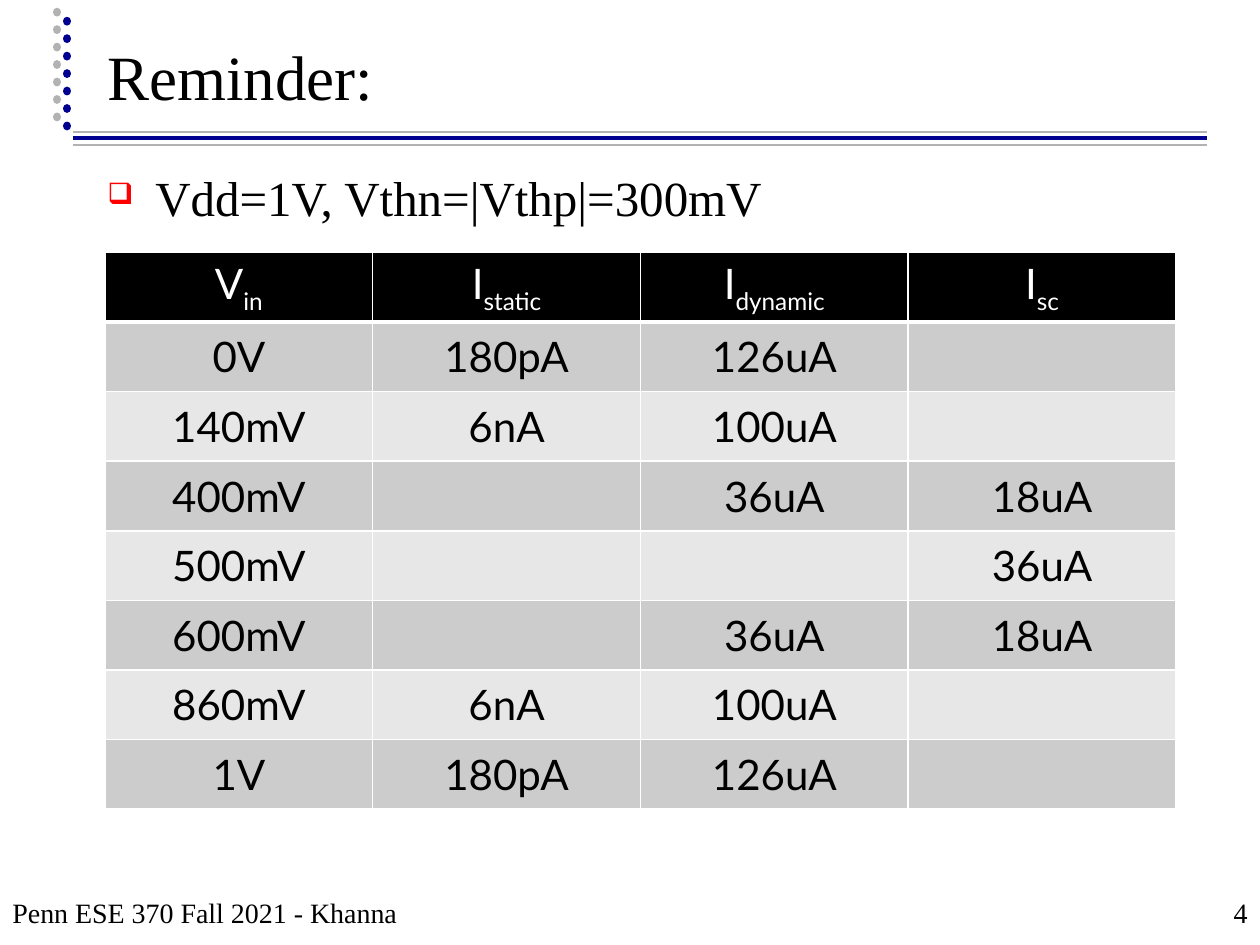
import pptx
import pptx.util
import pptx.dml.color
import pptx.enum.dml
import pptx.enum.shapes
import pptx.enum.text
import pptx.oxml
import pptx.oxml.ns

ALIGN = pptx.enum.text.PP_ALIGN
ANCHOR = pptx.enum.text.MSO_ANCHOR
DOT = pptx.enum.dml.MSO_LINE.ROUND_DOT
NS = pptx.oxml.ns.nsdecls("a")
BLUE, GREY, BLACK, WHITE, RED = "000090", "B2B2B2", "000000", "FFFFFF", "FF0000"
BANDS = ("E7E7E7", "CCCCCC")

HEADERS = [("V", "in"), ("I", "static"), ("I", "dynamic"), ("I", "sc")]
ROWS = [
    ("0V", "180pA", "126uA", ""),
    ("140mV", "6nA", "100uA", ""),
    ("400mV", "", "36uA", "18uA"),
    ("500mV", "", "", "36uA"),
    ("600mV", "", "36uA", "18uA"),
    ("860mV", "6nA", "100uA", ""),
    ("1V", "180pA", "126uA", ""),
]


def px(n):
    return pptx.util.Emu(round(n * 914400 / 126))


def rgb(value):
    return pptx.dml.color.RGBColor.from_string(value)


def xml(text):
    return pptx.oxml.parse_xml(text)


class Deck:
    """Holds the style and the current slide, and draws each kind of element."""

    serif, sans = "Times New Roman", "Lato"

    def __init__(self):
        self.prs = pptx.Presentation()
        self.prs.slide_width, self.prs.slide_height = px(1260), px(945)
        self.s = self.prs.slides.add_slide(self.prs.slide_layouts[5])

    def line(self, x1, y1, x2, y2, color, width, dash=None):
        kind = pptx.enum.shapes.MSO_CONNECTOR.STRAIGHT
        sp = self.s.shapes.add_connector(kind, px(x1), px(y1), px(x2), px(y2))
        sp.line.color.rgb = rgb(color)
        sp.line.width = pptx.util.Pt(width)
        if dash:
            sp.line.dash_style = dash
            sp.line._get_or_add_ln().set("cap", "rnd")
        sp._element.spPr.append(xml(f"<a:effectLst {NS}/>"))

    def run(self, p, text, size, font, color, base=0):
        r = p.add_run()
        r.text = text
        style = {"size": pptx.util.Pt(size), "name": font}
        for name, value in style.items():
            setattr(r.font, name, value)
        r.font.color.rgb = rgb(color)
        if base:
            r.font._element.set("baseline", str(base * 1000))

    def fill_text(self, sp, text, size, anchor, align):
        tf = sp.text_frame
        tf.word_wrap = True
        tf.vertical_anchor = anchor
        p = tf.paragraphs[0]
        p.alignment = align
        self.run(p, text, size, self.serif, BLACK)
        return tf

    def title(self, x, y, w, h, text):
        sp = self.s.shapes.title
        place = {"left": px(x), "top": px(y), "width": px(w), "height": px(h)}
        for name, value in place.items():
            setattr(sp, name, value)
        self.fill_text(sp, text, 36, ANCHOR.BOTTOM, ALIGN.LEFT)

    def text(self, x, y, w, h, text, size, anchor=ANCHOR.BOTTOM, align=ALIGN.LEFT):
        sp = self.s.shapes.add_textbox(px(x), px(y), px(w), px(h))
        return self.fill_text(sp, text, size, anchor, align)

    def bullet(self, x, y, w, h, text):
        tf = self.text(x, y, w, h, text, 28, ANCHOR.TOP)
        tf.margin_top = px(11)
        pPr = tf.paragraphs[0]._p.get_or_add_pPr()
        for name, value in {"marL": px(48), "indent": -px(48)}.items():
            pPr.set(name, str(int(value)))
        for tag in (
            f'<a:buClr {NS}><a:srgbClr val="{RED}"/></a:buClr>',
            f'<a:buSzPct {NS} val="60000"/>',
            f'<a:buChar {NS} char="❑"/>',
        ):
            pPr.append(xml(tag))

    def cell(self, cell, parts, fill, color, bottom=1):
        cell.fill.solid()
        cell.fill.fore_color.rgb = rgb(fill)
        cell.vertical_anchor = ANCHOR.MIDDLE
        p = cell.text_frame.paragraphs[0]
        p.alignment = ALIGN.CENTER
        for text, base in zip(parts, (0, -25)):
            if text:
                self.run(p, text, 24, self.sans, color, base)
        tcPr = cell._tc.get_or_add_tcPr()
        for i, (side, width) in enumerate({"L": 1, "R": 1, "T": 1, "B": bottom}.items()):
            tcPr.insert(i, xml(
                f'<a:ln{side} {NS} w="{width * 12700}"><a:solidFill>'
                f'<a:srgbClr val="{WHITE}"/></a:solidFill></a:ln{side}>'))

    def table(self, x, y, w, h, headers, rows):
        size = len(rows) + 1, len(headers)
        table = self.s.shapes.add_table(*size, px(x), px(y), px(w), px(h)).table
        for c, parts in enumerate(headers):
            self.cell(table.cell(0, c), parts, BLACK, WHITE, bottom=3)
        for r, row in enumerate(rows, 1):
            for c, value in enumerate(row):
                self.cell(table.cell(r, c), (value,), BANDS[r % 2], BLACK)


def main():
    deck = Deck()
    for y, color, width in ((138, BLUE, 2), (145, GREY, 1), (132, GREY, 1)):
        deck.line(73, y, 1207, y, color, width)
    for x, bottom, color in ((57, 117, GREY), (67, 126, BLUE)):
        deck.line(x, bottom, x, bottom - 116, color, 5, DOT)
    deck.title(95, 14, 1073, 105, "Reminder:")
    deck.bullet(95, 157, 1071, 693, "Vdd=1V, Vthn=|Vthp|=300mV")
    deck.text(0, 872, 683, 63, "Penn ESE 370 Fall 2021 - Khanna", 16)
    deck.text(998, 872, 262, 63, "4", 16, align=ALIGN.RIGHT)
    deck.table(105, 252, 1071, 557, HEADERS, ROWS)
    deck.prs.save("out.pptx")


if __name__ == "__main__":
    main()
